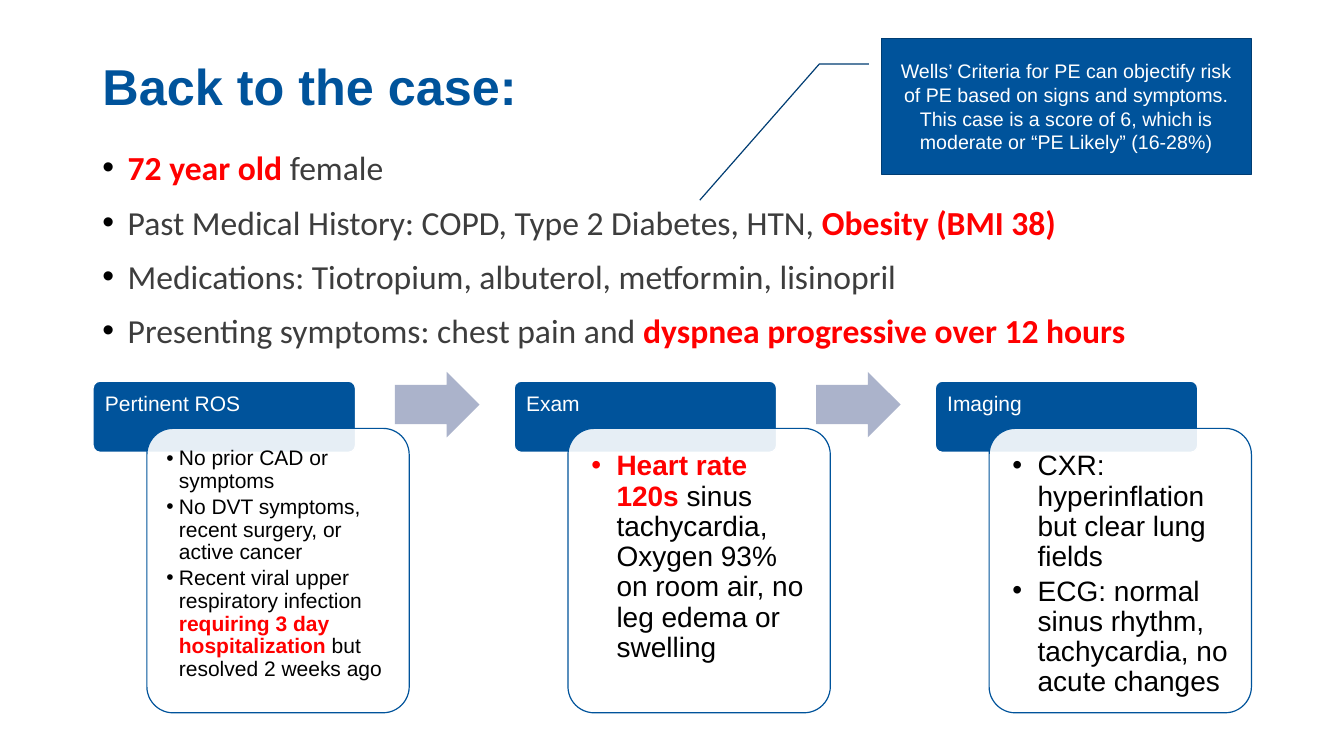
from dataclasses import dataclass

from lxml.etree import SubElement
from pptx import Presentation
from pptx.dml.color import RGBColor as RGB
from pptx.enum.shapes import MSO_SHAPE as Preset
from pptx.enum.text import MSO_ANCHOR as Anchor, MSO_AUTO_SIZE as AutoSize, PP_ALIGN as Align
from pptx.oxml.ns import qn
from pptx.util import Pt

# Content: every paragraph is a list of (wording, is a risk factor)
TITLE = "Back to the case:"
HISTORY = [
    [("72 year old ", True), ("female", False)],
    [("Past Medical History: COPD, Type 2 Diabetes, HTN, ", False), ("Obesity (BMI 38)", True)],
    [("Medications: Tiotropium, albuterol, metformin, lisinopril", False)],
    [("Presenting symptoms: chest pain and ", False), ("dyspnea progressive over 12 hours", True)],
]
WELLS = ("Wells’ Criteria for PE can objectify risk of PE based on signs and symptoms. "
         "This case is a score of 6, which is moderate or “PE Likely” (16-28%)")
ROS = [
    [("No prior CAD or symptoms", False)],
    [("No DVT symptoms, recent surgery, or active cancer", False)],
    [("Recent viral upper respiratory infection ", False),
     ("requiring 3 day hospitalization ", True), ("but resolved 2 weeks ago", False)],
]
EXAM = [
    [("Heart rate 120s ", True),
     ("sinus tachycardia, Oxygen 93% on room air, no leg edema or swelling", False)],
]
IMAGING = [
    [("CXR: hyperinflation but clear lung fields", False)],
    [("ECG: normal sinus rhythm, tachycardia, no acute changes", False)],
]
# heading, findings, type size, bullet indent, inset
STEPS = [
    ("Pertinent ROS", ROS, 15, 9, 8.4),
    ("Exam", EXAM, 20, 18, 11.2),
    ("Imaging", IMAGING, 20, 18, 11.2),
]


@dataclass(frozen=True)
class Theme:
    blue: str = "00539B"
    dark_blue: str = "003D73"
    arrow: str = "ABB3CB"
    risk: str = "FF0000"
    body: str = "3D3D3D"
    black: str = "000000"
    white: str = "FFFFFF"
    sans: str = "Arial"
    body_font: str = "Calibri"
    title_size: int = 36
    body_size: int = 24
    heading_size: int = 15
    note_size: int = 14
    line_width: float = 0.85


theme = Theme()

SLIDE_W, SLIDE_H = 960, 540
MARGIN, CONTENT_W = 66, 828
STEP_LEFT, STEP_PITCH = 66.5, 300.8
STEP_W, HEADING_TOP, HEADING_H = 187.4, 272.3, 50.8
CARD_SHIFT, CARD_TOP, CARD_H = 38.4, 306, 203.2
ARROW_SHIFT, ARROW_TOP, ARROW_W, ARROW_H = 215.6, 265.6, 60.4, 46.8

deck = Presentation()
deck.slide_width, deck.slide_height = Pt(SLIDE_W), Pt(SLIDE_H)
slide = deck.slides.add_slide(deck.slide_layouts[1])


def place(part, left, top, width, height):
    part.left, part.top, part.width, part.height = map(Pt, (left, top, width, height))


def add_run(paragraph, wording, size, color, font=theme.sans, bold=False):
    run = paragraph.add_run()
    run.text = wording
    run.font.name, run.font.size, run.font.bold = font, Pt(size), bold
    run.font.color.rgb = RGB.from_string(color)


def add_bullet(paragraph, indent, color=None):
    props = paragraph._p.get_or_add_pPr()
    props.set("marL", str(Pt(indent)))
    props.set("indent", str(-Pt(indent)))
    if color:
        SubElement(SubElement(props, qn("a:buClr")), qn("a:srgbClr"), val=color)
    SubElement(props, qn("a:buFont"), typeface=theme.sans)
    SubElement(props, qn("a:buChar"), char="•")


def fill_list(frame, items, size, color, font, indent, bullet_color=None,
              before=0, after=0, spacing=1.0):
    """Write bulleted paragraphs, with risk factors bold and red."""
    for index, item in enumerate(items):
        paragraph = frame.add_paragraph() if index else frame.paragraphs[0]
        add_bullet(paragraph, indent, bullet_color)
        paragraph.alignment = Align.LEFT
        paragraph.line_spacing = spacing
        paragraph.space_before = Pt(before if index else 0)
        paragraph.space_after = Pt(after)
        for wording, risk in item:
            add_run(paragraph, wording, size, theme.risk if risk else color, font, risk)


def add_block(preset, box, fill, line=None, adjustments=()):
    block = slide.shapes.add_shape(preset, *map(Pt, box))
    block.shadow.inherit = False
    block.fill.solid()
    block.fill.fore_color.rgb = RGB.from_string(fill)
    if line:
        block.line.color.rgb = RGB.from_string(line)
        block.line.width = Pt(theme.line_width)
    else:
        block.line.fill.background()
    for index, value in enumerate(adjustments):
        block.adjustments[index] = value
    return block


def set_frame(block, inset, anchor=Anchor.TOP):
    frame = block.text_frame
    frame.word_wrap = True
    frame.vertical_anchor = anchor
    frame.margin_left = frame.margin_right = frame.margin_top = frame.margin_bottom = Pt(inset)
    return frame


def add_step(left, heading, findings, size, indent, inset):
    header = add_block(Preset.ROUNDED_RECTANGLE, (left, HEADING_TOP, STEP_W, HEADING_H),
                       theme.blue, theme.white, [0.1])
    label = set_frame(header, 7).paragraphs[0]
    label.alignment, label.line_spacing = Align.LEFT, 0.9
    add_run(label, heading, theme.heading_size, theme.white)

    card = add_block(Preset.ROUNDED_RECTANGLE, (left + CARD_SHIFT, CARD_TOP, STEP_W, CARD_H),
                     theme.white, theme.blue, [0.1])
    card_color = card.fill._xPr.find(qn("a:solidFill"))[0]
    SubElement(card_color, qn("a:alpha"), val="90000")
    fill_list(set_frame(card, inset), findings, size, theme.black, theme.sans, indent,
              after=0.15 * size, spacing=0.9)


title, history = slide.shapes.title, slide.placeholders[1]
place(title, MARGIN, 0, CONTENT_W, 87)
title.text_frame.vertical_anchor = Anchor.BOTTOM
title.text_frame.auto_size = AutoSize.NONE
title_line = title.text_frame.paragraphs[0]
title_line.alignment, title_line.line_spacing = Align.LEFT, 0.9
add_run(title_line, TITLE, theme.title_size, theme.blue, bold=True)

place(history, MARGIN, 101.5, CONTENT_W, 385)
history.text_frame.auto_size = AutoSize.NONE
fill_list(history.text_frame, HISTORY, theme.body_size, theme.body, theme.body_font, 18,
          bullet_color=theme.black, before=10)

for number, step in enumerate(STEPS):
    step_left = STEP_LEFT + number * STEP_PITCH
    add_step(step_left, *step)
    if number < len(STEPS) - 1:
        add_block(Preset.RIGHT_ARROW, (step_left + ARROW_SHIFT, ARROW_TOP, ARROW_W, ARROW_H),
                  theme.arrow, adjustments=[0.6, 0.5])

callout = add_block(Preset.LINE_CALLOUT_2, (629.4, 27.4, 264.4, 97.2), theme.blue,
                    theme.dark_blue, [0.188, -0.033, 0.188, -0.167, 1.189, -0.49])
note = set_frame(callout, 7.2, Anchor.MIDDLE).paragraphs[0]
note.alignment = Align.CENTER
add_run(note, WELLS, theme.note_size, theme.white)

deck.save("out.pptx")
